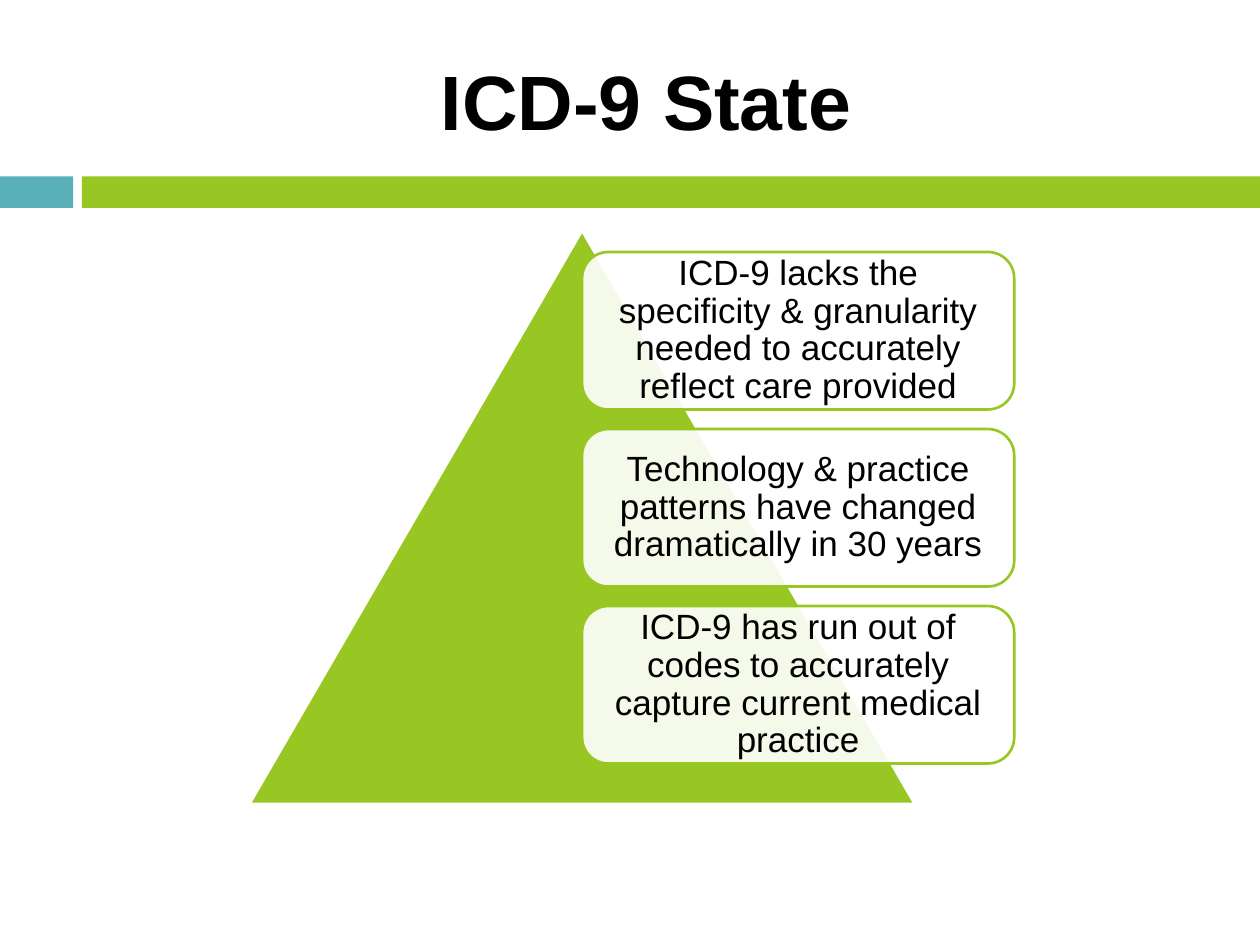
import pptx
import pptx.util
import pptx.oxml.ns
import pptx.dml.color
import pptx.enum.shapes
import pptx.enum.text
import lxml.etree

Pt = pptx.util.Pt
Kind = pptx.enum.shapes.MSO_SHAPE
Align = pptx.enum.text.PP_ALIGN
Mid = pptx.enum.text.MSO_ANCHOR.MIDDLE

# Content
TITLE = "ICD-9 State"
NOTES = [
    "ICD-9 lacks the specificity & granularity needed to accurately reflect care provided",
    "Technology & practice patterns have changed dramatically in 30 years",
    "ICD-9 has run out of codes to accurately capture current medical practice",
]
HUE = {"teal": "59B0B9", "green": "98C723", "white": "FFFFFF", "black": "000000"}
FONT = "Arial"

# Layout in points
WIDE, HIGH = 720, 540
BAND_TOP, BAND_H, TAB_W, BAND_X = 100.8, 18, 41.76, 46.8
PEAK = (142.56, 131.76, 380.16, 327.6)
BOX_X, BOX_Y, BOX_W, BOX_H, STEP = 332.64, 144, 246.96, 90, 101.16
INSET = 5.76


def color(name):
    return pptx.dml.color.RGBColor.from_string(HUE[name])


def draw(parent, kind, area, fill, line=None):
    shape = parent.add_shape(kind, *map(Pt, area))
    shape.shadow.inherit = False
    shape.fill.solid()
    shape.fill.fore_color.rgb = color(fill)
    if line:
        shape.line.color.rgb = color(line)
        shape.line.width = Pt(1.5)
    else:
        shape.line.fill.background()
    return shape


def fade(shape, share):
    tint = shape.fill._xPr.find(".//" + pptx.oxml.ns.qn("a:srgbClr"))
    alpha = lxml.etree.SubElement(tint, pptx.oxml.ns.qn("a:alpha"))
    alpha.set("val", str(share * 1000))


def write(shape, text, size, bold=False):
    frame = shape.text_frame
    frame.word_wrap = True
    frame.vertical_anchor = Mid
    para = frame.paragraphs[0]
    para.alignment = Align.CENTER
    run = para.add_run()
    run.text = text
    run.font.name = FONT
    run.font.size = Pt(size)
    run.font.bold = bold
    run.font.color.rgb = color("black")
    return frame


def main():
    deck = pptx.Presentation()
    deck.slide_width, deck.slide_height = Pt(WIDE), Pt(HIGH)
    slide = deck.slides.add_slide(deck.slide_layouts[5])

    # Band under the title
    draw(slide.shapes, Kind.RECTANGLE, (0, BAND_TOP, TAB_W, BAND_H), "teal")
    draw(slide.shapes, Kind.RECTANGLE,
         (BAND_X, BAND_TOP, WIDE - BAND_X, BAND_H), "green")

    # Title
    title = slide.shapes.title
    title.left, title.top, title.width, title.height = map(
        Pt, (48.24, 18, 642.24, 77.76))
    write(title, TITLE, 44, bold=True)

    # Pyramid with its list of boxes
    group = slide.shapes.add_group_shape().shapes
    draw(group, Kind.ISOSCELES_TRIANGLE, PEAK, "green", "white")
    for row, note in enumerate(NOTES):
        area = (BOX_X, BOX_Y + row * STEP, BOX_W, BOX_H)
        box = draw(group, Kind.ROUNDED_RECTANGLE, area, "white", "green")
        fade(box, 90)
        frame = write(box, note, 20)
        frame.paragraphs[0].line_spacing = 0.9
        frame.margin_left = frame.margin_right = Pt(INSET)
        frame.margin_top = frame.margin_bottom = Pt(INSET)

    deck.save("out.pptx")


if __name__ == "__main__":
    main()
